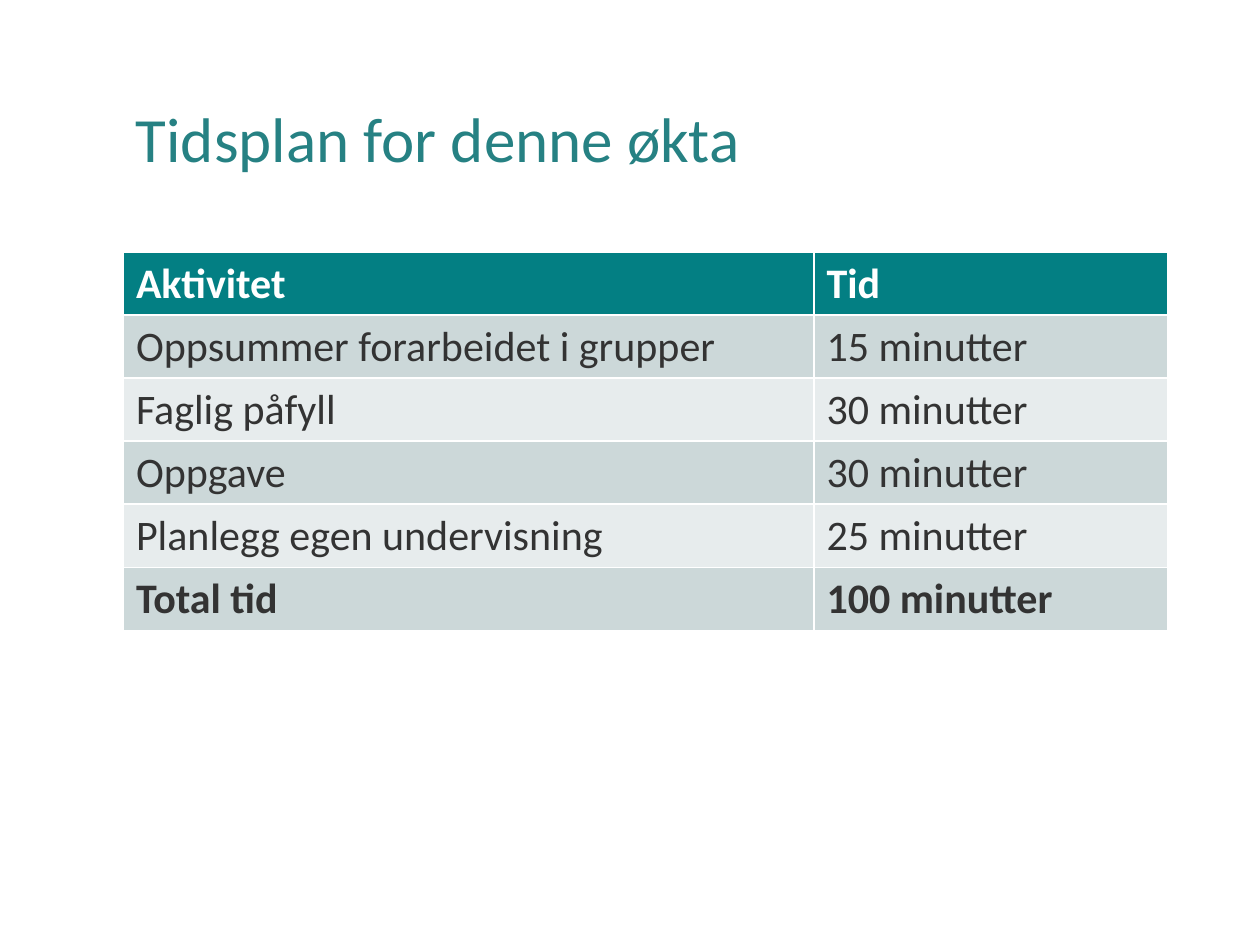
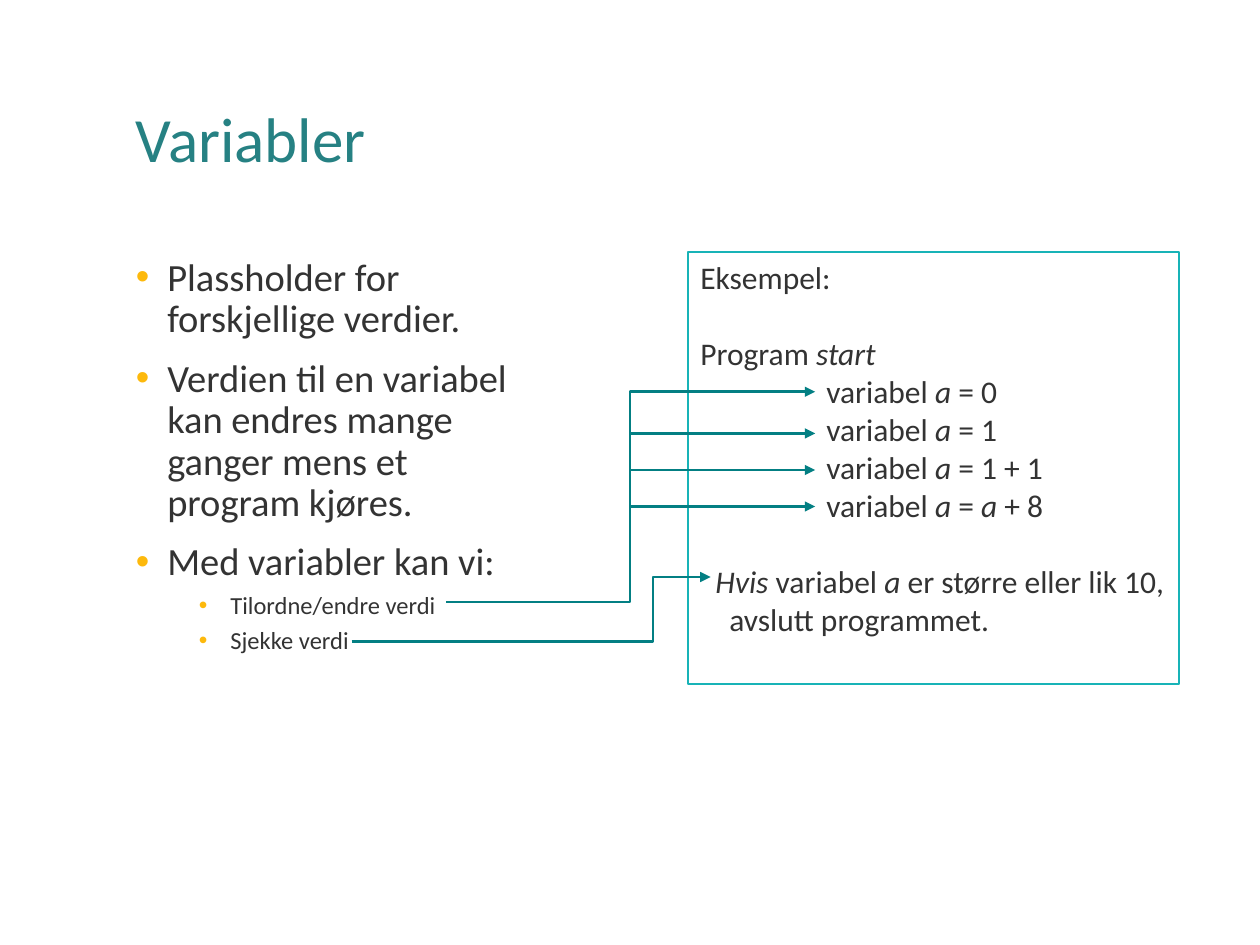
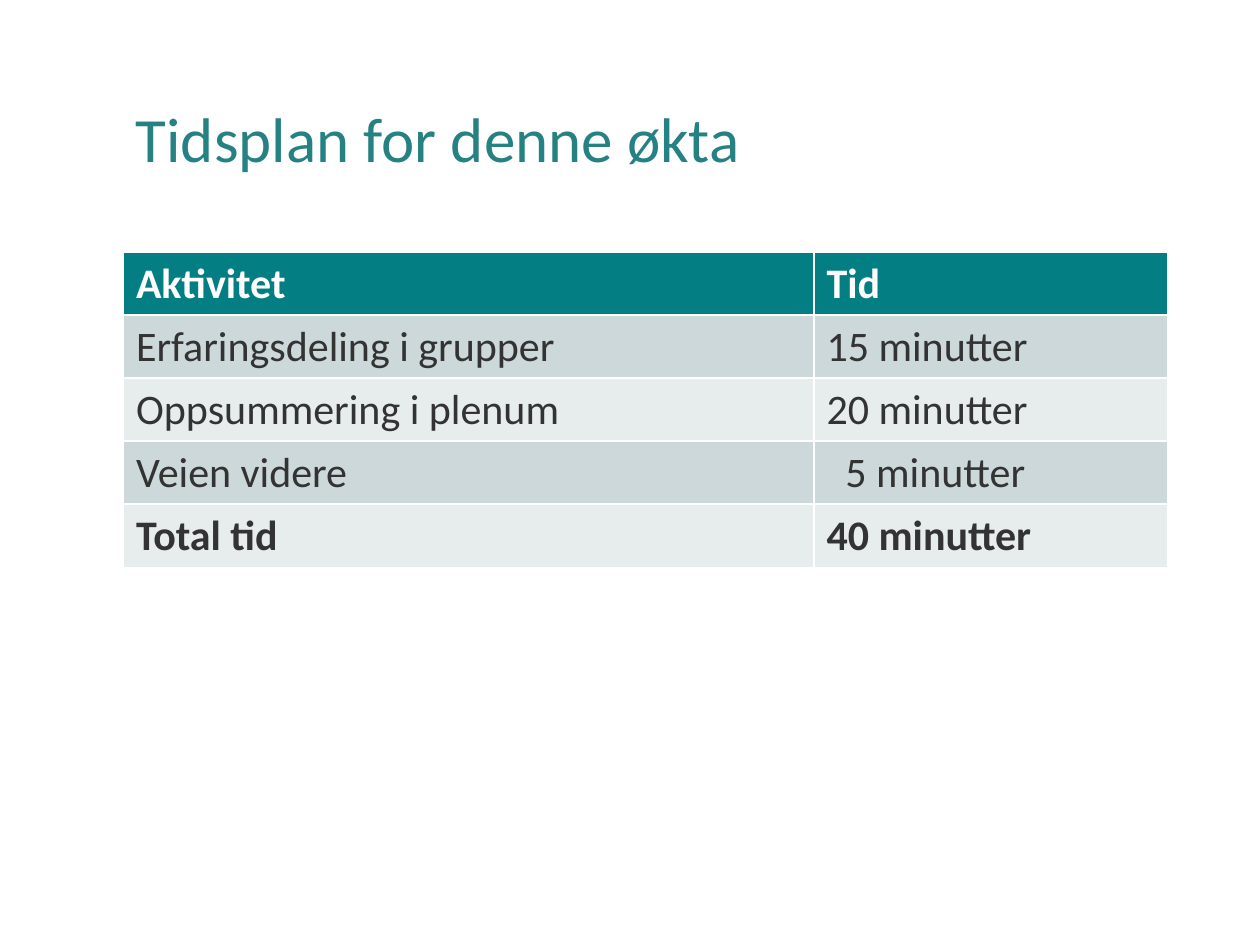
from pptx import Presentation
from pptx.dml.color import RGBColor
from pptx.enum.shapes import MSO_CONNECTOR, MSO_SHAPE
from pptx.enum.text import MSO_ANCHOR, PP_ALIGN
from pptx.oxml.ns import qn
from pptx.util import Inches, Pt
from lxml.etree import SubElement

FONT = "Calibri"
TITLE_COLOR = "268183"
TEXT_COLOR = "333333"
TEAL = "037F83"
BOX_LINE = "18B3B7"
BULLET_COLOR = "FDB90C"
WHITE = "FFFFFF"
BAND_COLORS = ("CCD8D9", "E7ECED")

LEFT = 0.98
CONTENT_TOP = 2
CONTENT_WIDTH = 8.29
COLUMN_WIDTHS = (5.48, 2.81)
ROW_HEIGHT = 0.5
DIGIT_WIDTH = 0.15

SCHEDULE_TITLE = "Tidsplan for denne økta"
SCHEDULE_HEADER = ("Aktivitet", "Tid")
FIRST_SCHEDULE = [
    ("Oppsummer forarbeidet i grupper", 15),
    ("Faglig påfyll", 30),
    ("Oppgave", 30),
    ("Planlegg egen undervisning", 25),
]
SECOND_SCHEDULE = [
    ("Erfaringsdeling i grupper", 15),
    ("Oppsummering i plenum", 20),
    ("Veien videre", 5),
]

# Bullet level and text
VARIABLE_BULLETS = [
    (0, "Plassholder for forskjellige verdier."),
    (0, "Verdien til en variabel kan endres mange ganger mens et program kjøres."),
    (0, "Med variabler kan vi:"),
    (1, "Tilordne/endre verdi"),
    (1, "Sjekke verdi"),
]
# Size, left margin and space before of each bullet level
BULLET_LEVELS = [(22, 0.25, 10), (14, 0.75, 5)]

# Left margin, first-line indent, blank line above, runs; every second run is italic
EXAMPLE_SIZE = 18
EXAMPLE_LINES = [
    (0, 0, False, ["Eksempel:"]),
    (0, 0, True, ["Program ", "start"]),
    (1, 0, False, ["variabel ", "a", " = 0"]),
    (1, 0, False, ["variabel ", "a ", "= 1"]),
    (1, 0, False, ["variabel ", "a ", "= 1 + 1"]),
    (1, 0, False, ["variabel ", "a ", "= ", "a", " + 8"]),
    (0.23, -0.11, True,
     ["", "Hvis ", "variabel ", "a", " er større eller lik 10, avslutt programmet."]),
]

ASSIGN_TRUNK, ASSIGN_END = 5, 6.47
ASSIGN_BRANCHES = (3.44, 3.73, 4.02)
# Start, end and x position of the bend
ELBOW_ARROWS = [
    ((3.54, 4.78), (ASSIGN_END, 3.11), ASSIGN_TRUNK),
    ((2.79, 5.09), (5.64, 4.58), 5.18),
]


def color(value):
    return RGBColor.from_string(value)


def add_run(paragraph, text, size, text_color=TEXT_COLOR, bold=False, italic=False):
    run = paragraph.add_run()
    run.text = text
    font = run.font
    font.name, font.size = FONT, Pt(size)
    font.bold, font.italic = bold, italic
    font.color.rgb = color(text_color)


def add_text_box(slide, left, top, width, height):
    box = slide.shapes.add_textbox(*map(Inches, (left, top, width, height)))
    box.text_frame.word_wrap = True
    return box.text_frame


def paragraphs_for(frame, items):
    """Yield a new paragraph of the frame with each item."""
    for index, item in enumerate(items):
        yield (frame.add_paragraph() if index else frame.paragraphs[0]), index, item


def set_indent(paragraph, left, first_line=0):
    properties = paragraph._p.get_or_add_pPr()
    properties.set("marL", str(Inches(left)))
    properties.set("indent", str(Inches(first_line)))
    return properties


def add_titled_slide(presentation, title):
    slide = presentation.slides.add_slide(presentation.slide_layouts[6])
    frame = add_text_box(slide, LEFT, 0.4, CONTENT_WIDTH, 1.45)
    frame.vertical_anchor = MSO_ANCHOR.MIDDLE
    frame.paragraphs[0].line_spacing = 0.9
    add_run(frame.paragraphs[0], title, 36, TITLE_COLOR)
    return slide


def add_schedule_slide(presentation, activities):
    slide = add_titled_slide(presentation, SCHEDULE_TITLE)
    total = sum(minutes for _, minutes in activities)
    timed = [*activities, ("Total tid", total)]
    rows = [SCHEDULE_HEADER] + [(name, f"{minutes} minutter") for name, minutes in timed]
    table = slide.shapes.add_table(
        len(rows), len(COLUMN_WIDTHS), Inches(LEFT), Inches(CONTENT_TOP),
        Inches(CONTENT_WIDTH), Inches(ROW_HEIGHT * len(rows))).table
    for column, width in zip(table.columns, COLUMN_WIDTHS):
        column.width = Inches(width)
    for row_index, row in enumerate(rows):
        is_header = row_index == 0
        is_bold = row_index in (0, len(rows) - 1)
        fill = TEAL if is_header else BAND_COLORS[(row_index - 1) % 2]
        for column_index, text in enumerate(row):
            cell = table.cell(row_index, column_index)
            cell.fill.solid()
            cell.fill.fore_color.rgb = color(fill)
            paragraph = cell.text_frame.paragraphs[0]
            if column_index == 1 and not is_header and timed[row_index - 1][1] < 10:
                set_indent(paragraph, DIGIT_WIDTH)
            add_run(paragraph, text, 24, WHITE if is_header else TEXT_COLOR, is_bold)


def add_bullets(slide):
    frame = add_text_box(slide, LEFT, CONTENT_TOP, 3.27, 4.57)
    for paragraph, index, (level, text) in paragraphs_for(frame, VARIABLE_BULLETS):
        size, margin, space_before = BULLET_LEVELS[level]
        paragraph.level = level
        paragraph.line_spacing = 0.9
        if index:
            paragraph.space_before = Pt(space_before)
        properties = set_indent(paragraph, margin, -0.25)
        bullet_color = SubElement(properties, qn("a:buClr"))
        SubElement(bullet_color, qn("a:srgbClr"), val=BULLET_COLOR)
        SubElement(properties, qn("a:buFont"), typeface="Arial")
        SubElement(properties, qn("a:buChar"), char="•")
        add_run(paragraph, text, size)


def add_example(slide):
    box = slide.shapes.add_shape(
        MSO_SHAPE.RECTANGLE, *map(Inches, (5.46, CONTENT_TOP, 3.9, 3.43)))
    box.shadow.inherit = False
    box.fill.solid()
    box.fill.fore_color.rgb = color(WHITE)
    box.line.color.rgb = color(BOX_LINE)
    box.line.width = Pt(1)
    frame = box.text_frame
    frame.word_wrap = True
    frame.vertical_anchor = MSO_ANCHOR.TOP
    for paragraph, _, (margin, first_line, gap, runs) in paragraphs_for(frame, EXAMPLE_LINES):
        paragraph.alignment = PP_ALIGN.LEFT
        if gap:
            paragraph.space_before = Pt(EXAMPLE_SIZE * 1.22)
        set_indent(paragraph, margin, first_line)
        for run_index, text in enumerate(runs):
            if text:
                add_run(paragraph, text, EXAMPLE_SIZE, italic=run_index % 2 == 1)


def add_arrow(slide, start, end, bend=None):
    kind = MSO_CONNECTOR.STRAIGHT if bend is None else MSO_CONNECTOR.ELBOW
    arrow = slide.shapes.add_connector(kind, *map(Inches, (*start, *end)))
    arrow.line.color.rgb = color(TEAL)
    arrow.line.width = Pt(1.5)
    SubElement(arrow.line._get_or_add_ln(), qn("a:tailEnd"), type="triangle")
    properties = arrow._element.spPr
    SubElement(properties, qn("a:effectLst"))
    if bend is not None:
        share = round((bend - start[0]) / (end[0] - start[0]) * 100000)
        adjustments = properties.find(qn("a:prstGeom")).find(qn("a:avLst"))
        SubElement(adjustments, qn("a:gd"), name="adj1", fmla=f"val {share}")


def add_variables_slide(presentation):
    slide = add_titled_slide(presentation, "Variabler")
    add_bullets(slide)
    add_example(slide)
    for start, end, bend in ELBOW_ARROWS:
        add_arrow(slide, start, end, bend)
    for y in ASSIGN_BRANCHES:
        add_arrow(slide, (ASSIGN_TRUNK, y), (ASSIGN_END, y))


def main():
    presentation = Presentation()
    presentation.slide_width, presentation.slide_height = Inches(10), Inches(7.5)
    add_schedule_slide(presentation, FIRST_SCHEDULE)
    add_variables_slide(presentation)
    add_schedule_slide(presentation, SECOND_SCHEDULE)
    presentation.save("out.pptx")


if __name__ == "__main__":
    main()
